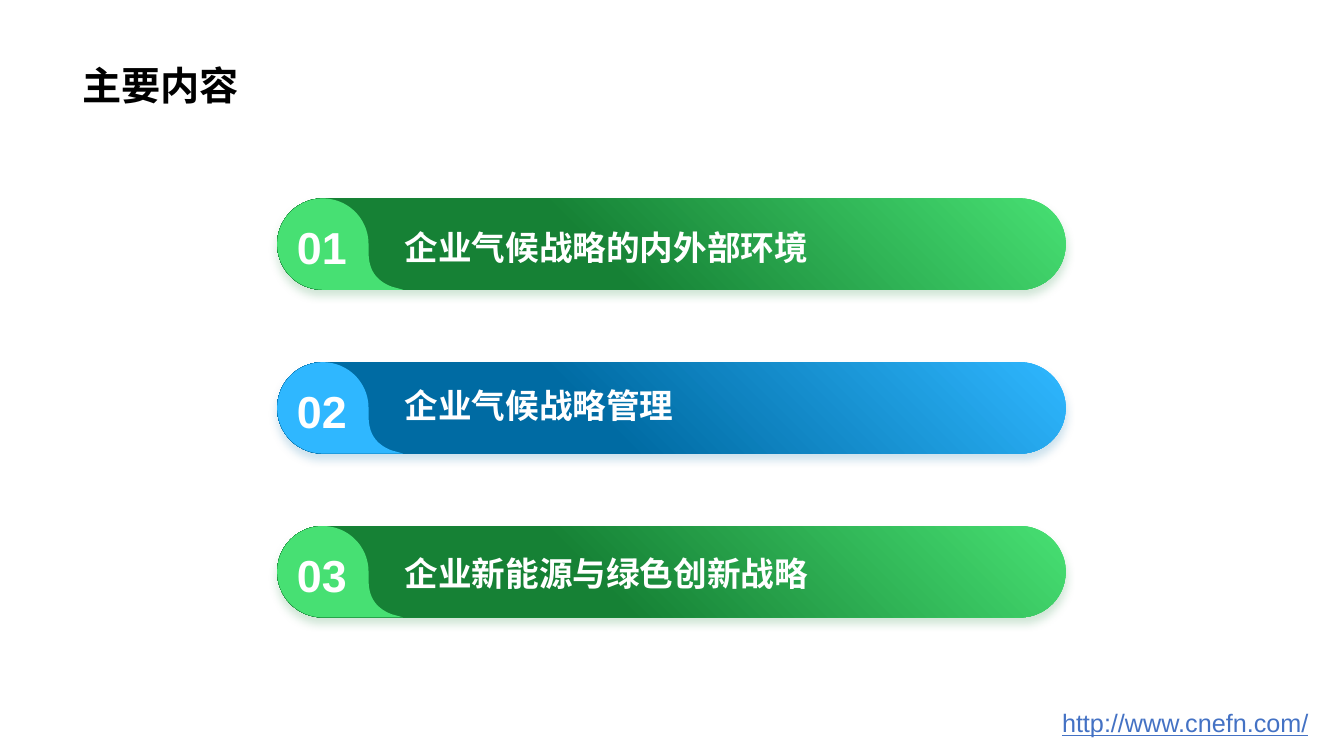
import math
from dataclasses import dataclass

from lxml import etree
from pptx import Presentation
from pptx import util as u
from pptx.dml.color import RGBColor
from pptx.enum import shapes, text
from pptx.oxml.ns import qn

PX = 9525  # EMU per px, 96 px to the inch


@dataclass(frozen=True)
class Theme:
    font: str = "Arial"
    black: str = "000000"
    white: str = "FFFFFF"
    link: str = "4472C4"
    green: tuple[str, str] = ("47E073", "168135")
    blue: tuple[str, str] = ("2FB7FF", "006BA3")
    title_size: int = 28
    number_size: int = 32
    heading_size: int = 24
    link_size: int = 18


@dataclass(frozen=True)
class Chapter:
    heading: str
    heading_offset: int
    colours: tuple[str, str]  # light, dark


THEME = Theme()
CHAPTERS = [
    Chapter("企业气候战略的内外部环境", 22, THEME.green),
    Chapter("企业气候战略管理", 17, THEME.blue),
    Chapter("企业新能源与绿色创新战略", 21, THEME.green),
]
BAR_LEFT, BAR_TOP, BAR_WIDTH, BAR_HEIGHT, BAR_PITCH = 264, 189, 751, 87, 156


def px(length: float) -> u.Emu:
    return u.Emu(round(length * PX))


def write(shape, content: str, size: int, colour: str, bold: bool = True,
          align=text.PP_ALIGN.LEFT) -> None:
    shape.text_frame.text = content
    paragraph = shape.text_frame.paragraphs[0]
    paragraph.alignment = align
    font = paragraph.runs[0].font
    font.name, font.size, font.bold = THEME.font, u.Pt(size), bold
    font.color.rgb = RGBColor.from_string(colour)


def add_text(slide, left: int, top: int, width: int, height: int, wrap: bool = True):
    box = slide.shapes.add_textbox(px(left), px(top), px(width), px(height))
    box.text_frame.word_wrap = wrap
    return box


def add_soft_shadow(shape, colour: str) -> None:
    """Cast a faint tinted shadow straight down."""
    shape.shadow.inherit = False
    effects = shape._element.spPr.find(qn("a:effectLst"))
    shadow = etree.SubElement(effects, qn("a:outerShdw"), blurRad=str(u.Pt(6)),
                              dist=str(u.Pt(4)), dir="5400000", algn="t", rotWithShape="0")
    tint = etree.SubElement(shadow, qn("a:srgbClr"), val=colour)
    etree.SubElement(tint, qn("a:alpha"), val="20000")


def add_bar(slide, top: int, colours: tuple[str, str]) -> None:
    bar = slide.shapes.add_shape(shapes.MSO_SHAPE.ROUNDED_RECTANGLE, px(BAR_LEFT), px(top),
                                 px(BAR_WIDTH), px(BAR_HEIGHT))
    bar.adjustments[0] = 0.5
    bar.line.fill.background()
    bar.fill.gradient()
    bar.fill.gradient_angle = 225
    for stop, colour, position in zip(bar.fill.gradient_stops, colours, (0, 0.6)):
        stop.color.rgb = RGBColor.from_string(colour)
        stop.position = position
    add_soft_shadow(bar, colours[1])


def badge_outline() -> list[tuple[float, float]]:
    """Three quarters of a circle, then a curved tail along the bar's lower edge."""
    radius = BAR_HEIGHT / 2
    arc = [(radius + radius * math.cos(math.radians(a)), radius + radius * math.sin(math.radians(a)))
           for a in range(90, 361, 3)]
    tail_controls = [(87, 49), (87, 60), (88, 76), (109, 84)]
    tail = []
    for step in range(21):
        t = step / 20
        weights = [math.comb(3, i) * t**i * (1 - t)**(3 - i) for i in range(4)]
        tail.append(tuple(sum(w * point[axis] for w, point in zip(weights, tail_controls))
                          for axis in (0, 1)))
    return arc + tail + [(120, BAR_HEIGHT)]


def add_badge(slide, top: int, colour: str) -> None:
    points = [(px(BAR_LEFT + x), px(top + y)) for x, y in badge_outline()]
    builder = slide.shapes.build_freeform(*points[0])
    builder.add_line_segments(points[1:], close=True)
    badge = builder.convert_to_shape()
    badge.shadow.inherit = False
    badge.fill.solid()
    badge.fill.fore_color.rgb = RGBColor.from_string(colour)
    badge.line.fill.background()


def add_chapter(slide, index: int, chapter: Chapter) -> None:
    top = BAR_TOP + index * BAR_PITCH
    add_bar(slide, top, chapter.colours)
    add_badge(slide, top, chapter.colours[0])
    write(add_text(slide, 376, top + chapter.heading_offset, 554, 48),
          chapter.heading, THEME.heading_size, THEME.white)
    write(add_text(slide, 273, top + 16, 67, 61, wrap=False),
          f"{index + 1:02}", THEME.number_size, THEME.white, align=text.PP_ALIGN.CENTER)


def main() -> None:
    presentation = Presentation()
    presentation.slide_width, presentation.slide_height = px(1280), px(720)
    slide = presentation.slides.add_slide(presentation.slide_layouts[5])

    title = slide.shapes.title
    title.left, title.top, title.width, title.height = px(69), px(0), px(1140), px(108)
    title.text_frame.vertical_anchor = text.MSO_ANCHOR.BOTTOM
    write(title, "主要内容", THEME.title_size, THEME.black)

    for index, chapter in enumerate(CHAPTERS):
        add_chapter(slide, index, chapter)

    address = add_text(slide, 1002, 669, 263, 38)
    write(address, "http://www.cnefn.com/", THEME.link_size, THEME.link, bold=False)
    address.text_frame.paragraphs[0].runs[0].font.underline = True

    presentation.save("out.pptx")


if __name__ == "__main__":
    main()
